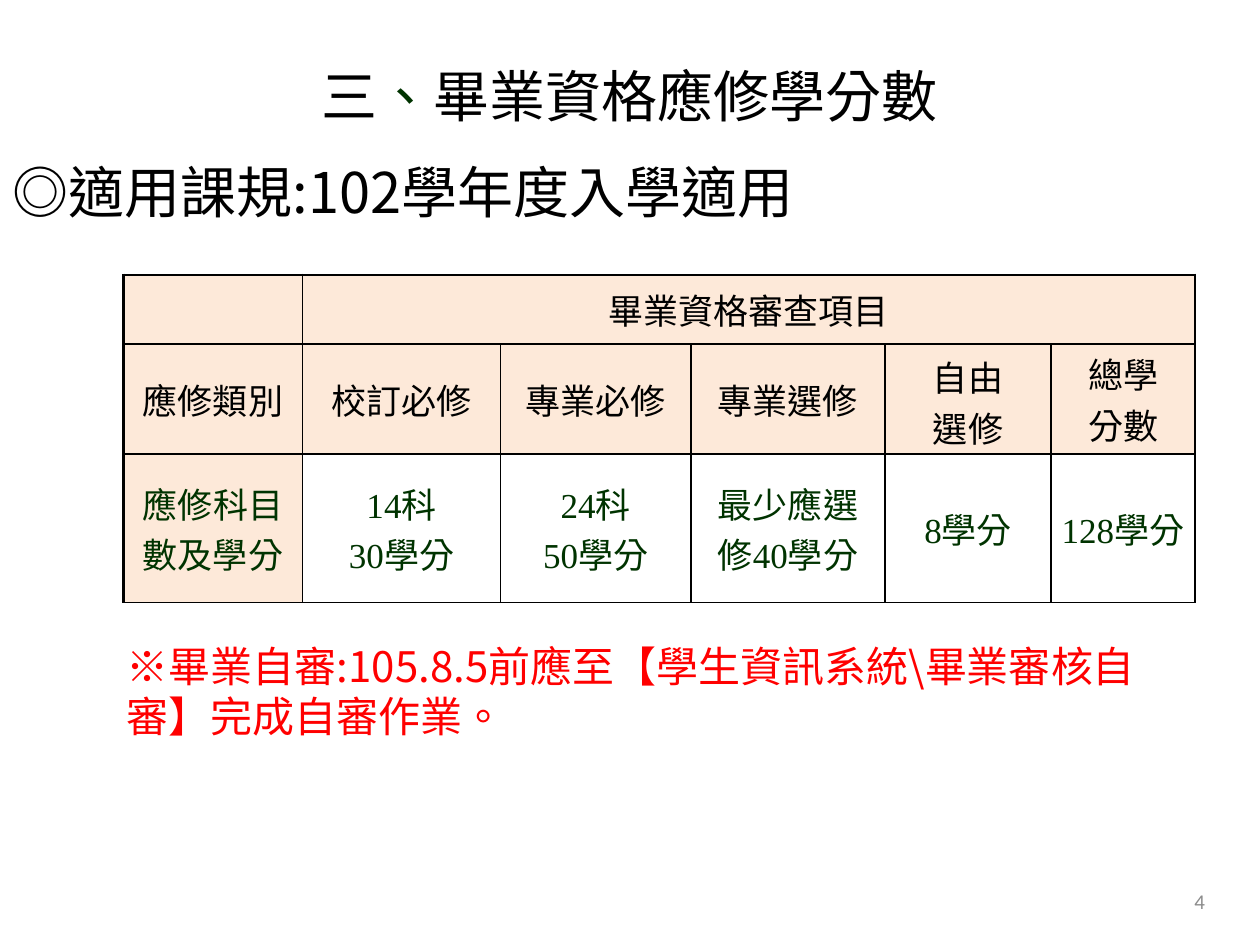
import pptx
import pptx.dml.color
import pptx.enum.lang
import pptx.enum.text
import pptx.util
from lxml import etree
from pptx.oxml.ns import qn

Cm, Pt = pptx.util.Cm, pptx.util.Pt
RGBColor = pptx.dml.color.RGBColor
ALIGN = pptx.enum.text.PP_ALIGN
MIDDLE = pptx.enum.text.MSO_ANCHOR.MIDDLE
BLACK = RGBColor(0x00, 0x00, 0x00)
GREEN = RGBColor(0x00, 0x33, 0x00)
RED = RGBColor(0xFF, 0x00, 0x00)
GRAY = RGBColor(0x8C, 0x8C, 0x8C)
PEACH = RGBColor(0xFD, 0xE9, 0xD9)

CJK_JP, CJK_SC = "Noto Sans CJK JP", "Noto Sans CJK SC"
COL_WIDTHS = (3.61, 3.99, 3.84, 3.91, 3.35, 2.9)
ROW_HEIGHTS = (1.4, 2.21, 3)
CREDITS = (
    ("", "畢業資格審查項目", "", "", "", ""),
    ("應修類別", "校訂必修", "專業必修", "專業選修", "自由\n選修", "總學\n分數"),
    ("應修科目數及學分", "14科\n30學分", "24科\n50學分", "最少應選修40學分",
     "8學分", "128學分"),
)


def set_font(p, name, size, color, east_asian=None):
    f = p.font
    f.name, f.size = name, Pt(size)
    f.color.rgb = color
    f.language_id = pptx.enum.lang.MSO_LANGUAGE_ID.TRADITIONAL_CHINESE
    ea = etree.SubElement(f._element, qn("a:ea"))
    ea.set("typeface", east_asian or name)


def add_title(slide):
    sp = slide.shapes.title
    sp.left, sp.top, sp.width, sp.height = Cm(0), Cm(1.35), Cm(25.4), Cm(4.17)
    tf = sp.text_frame
    tf.auto_size = pptx.enum.text.MSO_AUTO_SIZE.NONE
    tf.vertical_anchor = MIDDLE
    tf.margin_bottom = Cm(1.8)

    heading = tf.paragraphs[0]
    for text in ("三", "、", "畢業資格應修學分數"):
        r = heading.add_run()
        r.text = text
        if text == "、":
            r.font.color.rgb = GREEN
    rule = tf.add_paragraph()
    rule.text = "◎適用課規:102學年度入學適用".replace(":", ":")

    for p, align, font in ((heading, ALIGN.CENTER, CJK_JP), (rule, ALIGN.LEFT, CJK_SC)):
        p.alignment = align
        p.line_spacing = Pt(55)
        set_font(p, font, 32, BLACK)


def add_text(slide, box, text, align, font, size, color):
    tf = slide.shapes.add_textbox(*map(Cm, box)).text_frame
    tf.word_wrap = True
    tf.vertical_anchor = MIDDLE
    p = tf.paragraphs[0]
    p.text, p.alignment = text, align
    set_font(p, font, size, color)


def set_borders(cell, **widths):
    """Draw black cell sides; widths are points keyed by L, R, T and B."""
    tc_pr = cell._tc.get_or_add_tcPr()
    for side, width in widths.items():
        ln = etree.SubElement(tc_pr, qn(f"a:ln{side}"), w=str(Pt(width)))
        fill = etree.SubElement(ln, qn("a:solidFill"))
        etree.SubElement(fill, qn("a:srgbClr"), val=str(BLACK))


def fill_cell(cell, row, col, text):
    last_col = len(COL_WIDTHS) - 1
    at_right = col == last_col or cell.is_merge_origin
    set_borders(cell, L=1 if col else 1.5, R=1.5 if at_right else 1,
                T=1 if row else 1.5, B=1)
    if row < 2 or col == 0:
        cell.fill.solid()
        cell.fill.fore_color.rgb = PEACH
    else:
        cell.fill.background()
    cell.vertical_anchor = MIDDLE
    if col == last_col:
        cell.margin_left = cell.margin_right = 0
        cell.margin_top = cell.margin_bottom = 0
    cell.text_frame.text = text
    for p in cell.text_frame.paragraphs:
        p.alignment = ALIGN.CENTER
        set_font(p, "Times New Roman", 20, GREEN if row == 2 else BLACK, CJK_JP)


def add_credit_table(slide):
    table = slide.shapes.add_table(
        len(ROW_HEIGHTS), len(COL_WIDTHS), Cm(2.49), Cm(5.54),
        Cm(sum(COL_WIDTHS)), Cm(sum(ROW_HEIGHTS))).table
    table.first_row = table.horz_banding = False
    for column, width in zip(table.columns, COL_WIDTHS):
        column.width = Cm(width)
    for row, height in zip(table.rows, ROW_HEIGHTS):
        row.height = Cm(height)
    table.cell(0, 1).merge(table.cell(0, len(COL_WIDTHS) - 1))
    for i, texts in enumerate(CREDITS):
        for j, text in enumerate(texts):
            fill_cell(table.cell(i, j), i, j, text)


def main():
    prs = pptx.Presentation()
    prs.slide_width, prs.slide_height = Cm(25.4), Cm(19.05)
    slide = prs.slides.add_slide(prs.slide_layouts[5])
    add_title(slide)
    add_text(slide, (2.31, 12.73, 22, 2.39),
             "※畢業自審:105.8.5前應至【學生資訊系統\\畢業審核自審】完成自審作業。".replace(":", ":"),
             ALIGN.LEFT, CJK_SC, 24, RED)
    add_credit_table(slide)
    add_text(slide, (18.62, 17.65, 5.92, 1.02), "4", ALIGN.RIGHT, "Calibri", 12, GRAY)
    prs.save("out.pptx")


if __name__ == "__main__":
    main()
